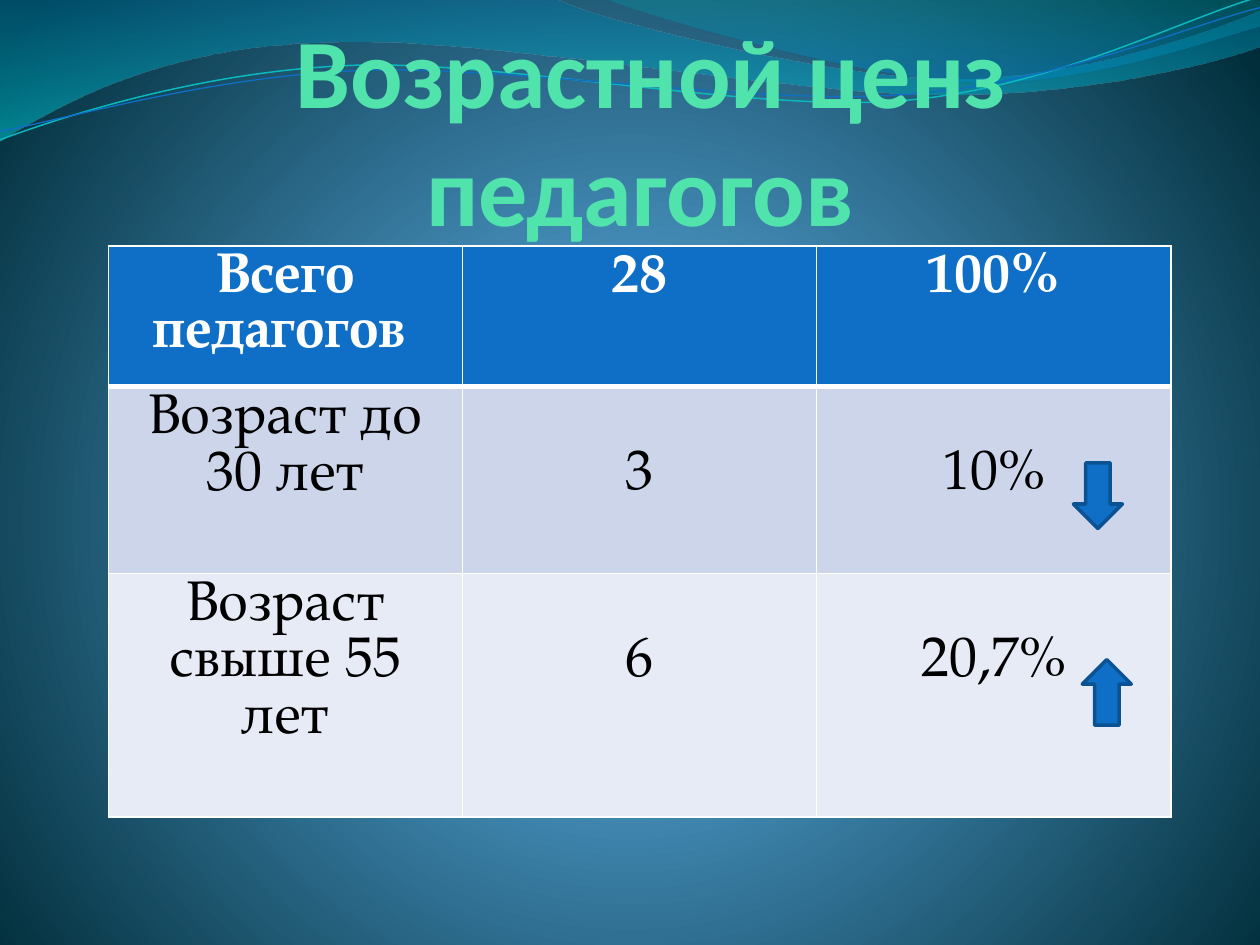
from dataclasses import dataclass

from lxml import etree
from pptx import Presentation
from pptx.dml.color import RGBColor
from pptx.enum.shapes import MSO_SHAPE
from pptx.enum.text import MSO_ANCHOR, PP_ALIGN
from pptx.oxml.ns import qn
from pptx.util import Pt

UP_ARROW = MSO_SHAPE.UP_ARROW
CENTER = PP_ALIGN.CENTER
TOP, BOTTOM = MSO_ANCHOR.TOP, MSO_ANCHOR.BOTTOM


@dataclass(frozen=True)
class Theme:
    title_font: str = "Calibri"
    table_font: str = "TeX Gyre Pagella"
    title_size: float = 56
    table_size: float = 32
    title: str = "50E3AC"
    accent: str = "0F6FC6"
    accent_dark: str = "0B5292"
    white: str = "FFFFFF"
    black: str = "000000"
    bands: tuple = ("CCD5EA", "E7EBF5")
    # Gradient stops: position in %, colour, opacity in %
    backdrop: tuple = ((0, "4AA0D6", 100), (25, "4C98C7", 100), (100, "002C38", 100))
    left_wave: tuple = ((0, "0074A1", 45), (100, "00C6CF", 55))
    right_wave: tuple = ((0, "00A1A9", 30), (80, "008BBF", 45))
    teal_line: str = "0AB8BF"


THEME = Theme()


@dataclass(frozen=True)
class Wave:
    """Points joined by segments: 2 numbers make a line, 6 make a Bézier curve."""
    start: tuple
    segments: tuple
    gradient: tuple = ()
    line: str = ""
    width: float = 0
    rotation: float = 0


@dataclass(frozen=True)
class Trend:
    left: float
    top: float
    rotation: float


WAVES = (
    Wave((0, 0), ((317, -1), (343, 12, 478, 45, 546, 45), (614, 45, 690, 19, 720, 6),
                  (721, 26), (708, 32, 626, 55, 537, 54), (448, 54, 275, 20, 185, 24),
                  (93, 26, 33, 60, -1, 81)), gradient=THEME.left_wave),
    Wave((345, -1), ((367, 8, 491, 45, 554, 47), (616, 50, 692, 23, 720, 15), (720, 0)),
         gradient=THEME.right_wave),
    Wave((-1.4, 62.9), ((33.8, 51.7, 114.1, 29.4, 199.8, 29.9),
                        (284.8, 30.3, 425.9, 67.3, 512.5, 64.9),
                        (599.1, 62.4, 676.5, 25.7, 720.2, 15.5)),
         line=THEME.teal_line, width=0.85, rotation=357.3),
    Wave((-1.1, 58), ((32.9, 53.8, 118.3, 32.5, 204.1, 33),
                      (290.6, 33.4, 428.9, 63.8, 515.5, 61.4),
                      (601.4, 59.6, 678.4, 30.1, 721.4, 21.3)),
         line=THEME.accent, width=0.75, rotation=357.3),
)
ROWS = (
    ("Всего педагогов ", "28", "100%"),
    ("Возраст до 30 лет", "3", "10%"),
    ("Возраст свыше 55 лет", "6", "20,7%"),
)
ROW_HEIGHTS = (80.3, 106.7, 139.3)
COLUMN_WIDTH = 202.4
TRENDS = (Trend(613.4, 264.5, 180), Trend(618.5, 376.9, 0))


def rgb(color: str) -> RGBColor:
    return RGBColor.from_string(color)


def add_child(parent, tag: str, **attributes):
    return etree.SubElement(parent, qn(tag), {k: str(v) for k, v in attributes.items()})


def set_gradient(fill, properties, stops: tuple, radial: bool = False) -> None:
    fill.gradient()
    gradient = properties.find(qn("a:gradFill"))
    for child in list(gradient):
        gradient.remove(child)
    stop_list = add_child(gradient, "a:gsLst")
    for position, color, opacity in stops:
        stop = add_child(stop_list, "a:gs", pos=position * 1000)
        tone = add_child(stop, "a:srgbClr", val=color)
        if opacity < 100:
            add_child(tone, "a:alpha", val=opacity * 1000)
    if radial:
        focus = add_child(gradient, "a:path", path="circle")
        add_child(focus, "a:fillToRect", l=10000, t=110000, r=10000, b=100000)
    else:
        add_child(gradient, "a:lin", ang=5400000, scaled=0)


def write_text(frame, text: str, *, font: str, size: float, color: str,
               bold: bool = False, anchor=TOP) -> None:
    frame.word_wrap = True
    frame.vertical_anchor = anchor
    paragraph = frame.paragraphs[0]
    paragraph.alignment = CENTER
    run = paragraph.add_run()
    run.text = text
    run.font.name, run.font.size, run.font.bold = font, Pt(size), bold
    run.font.color.rgb = rgb(color)


def bend_segments(shape, segments: tuple) -> None:
    """Turn the straight segments that have control points into curves."""
    steps = list(shape._element.iter(qn("a:lnTo")))
    for step, segment in zip(steps, segments):
        if len(segment) == 6:
            curve = etree.Element(qn("a:cubicBezTo"))
            for x, y in zip(segment[::2], segment[1::2]):
                add_child(curve, "a:pt", x=Pt(x) - shape.left, y=Pt(y) - shape.top)
            step.getparent().replace(step, curve)


def draw_wave(slide, wave: Wave) -> None:
    builder = slide.shapes.build_freeform(Pt(wave.start[0]), Pt(wave.start[1]), scale=1.0)
    ends = [(Pt(segment[-2]), Pt(segment[-1])) for segment in wave.segments]
    builder.add_line_segments(ends, close=bool(wave.gradient))
    shape = builder.convert_to_shape()
    bend_segments(shape, wave.segments)
    shape.rotation = wave.rotation
    shape.shadow.inherit = False
    if wave.gradient:
        set_gradient(shape.fill, shape._element.spPr, wave.gradient)
        shape.line.fill.background()
    else:
        shape.fill.background()
        shape.line.color.rgb = rgb(wave.line)
        shape.line.width = Pt(wave.width)


def draw_title(slide, text: str) -> None:
    box = slide.shapes.add_textbox(Pt(41.4), Pt(22.5), Pt(661.7), Pt(118))
    frame = box.text_frame
    frame.margin_left = frame.margin_right = frame.margin_top = frame.margin_bottom = 0
    write_text(frame, text, font=THEME.title_font, size=THEME.title_size,
               color=THEME.title, bold=True, anchor=BOTTOM)


def set_borders(cell, top: float, bottom: float) -> None:
    properties = cell._tc.get_or_add_tcPr()
    for side, width in (("L", 1), ("R", 1), ("T", top), ("B", bottom)):
        border = add_child(properties, f"a:ln{side}", w=int(Pt(width)))
        add_child(add_child(border, "a:solidFill"), "a:srgbClr", val=THEME.white)


def draw_table(slide) -> None:
    table = slide.shapes.add_table(len(ROWS), len(ROWS[0]), Pt(61.9), Pt(140.5),
                                   Pt(COLUMN_WIDTH * 3), Pt(sum(ROW_HEIGHTS))).table
    for column in table.columns:
        column.width = Pt(COLUMN_WIDTH)
    for r, (texts, height) in enumerate(zip(ROWS, ROW_HEIGHTS)):
        table.rows[r].height = Pt(height)
        header = r == 0
        for c, text in enumerate(texts):
            cell = table.cell(r, c)
            set_borders(cell, top=3 if r == 1 else 1, bottom=3 if header else 1)
            cell.fill.solid()
            cell.fill.fore_color.rgb = rgb(THEME.accent if header else THEME.bands[r - 1])
            cell.margin_bottom = 0
            # Figures stand level with the second line of their label
            if c and not header:
                cell.margin_top = Pt(3.6 + THEME.table_size)
            write_text(cell.text_frame, text, font=THEME.table_font,
                       size=THEME.table_size, bold=header,
                       color=THEME.white if header else THEME.black)


def draw_trend(slide, trend: Trend) -> None:
    arrow = slide.shapes.add_shape(UP_ARROW, Pt(trend.left), Pt(trend.top), Pt(28), Pt(37.5))
    arrow.rotation = trend.rotation
    arrow.shadow.inherit = False
    arrow.fill.solid()
    arrow.fill.fore_color.rgb = rgb(THEME.accent)
    arrow.line.color.rgb = rgb(THEME.accent_dark)
    arrow.line.width = Pt(2)


def main() -> None:
    deck = Presentation()
    deck.slide_width, deck.slide_height = Pt(720), Pt(540)
    slide = deck.slides.add_slide(deck.slide_layouts[6])

    # Backdrop and waves
    backdrop = slide.background.fill
    set_gradient(backdrop, slide._element.cSld.bg.bgPr, THEME.backdrop, radial=True)
    for wave in WAVES:
        draw_wave(slide, wave)

    # Title, age table and trend arrows
    draw_title(slide, "Возрастной ценз педагогов ")
    draw_table(slide)
    for trend in TRENDS:
        draw_trend(slide, trend)

    deck.save("out.pptx")


if __name__ == "__main__":
    main()
